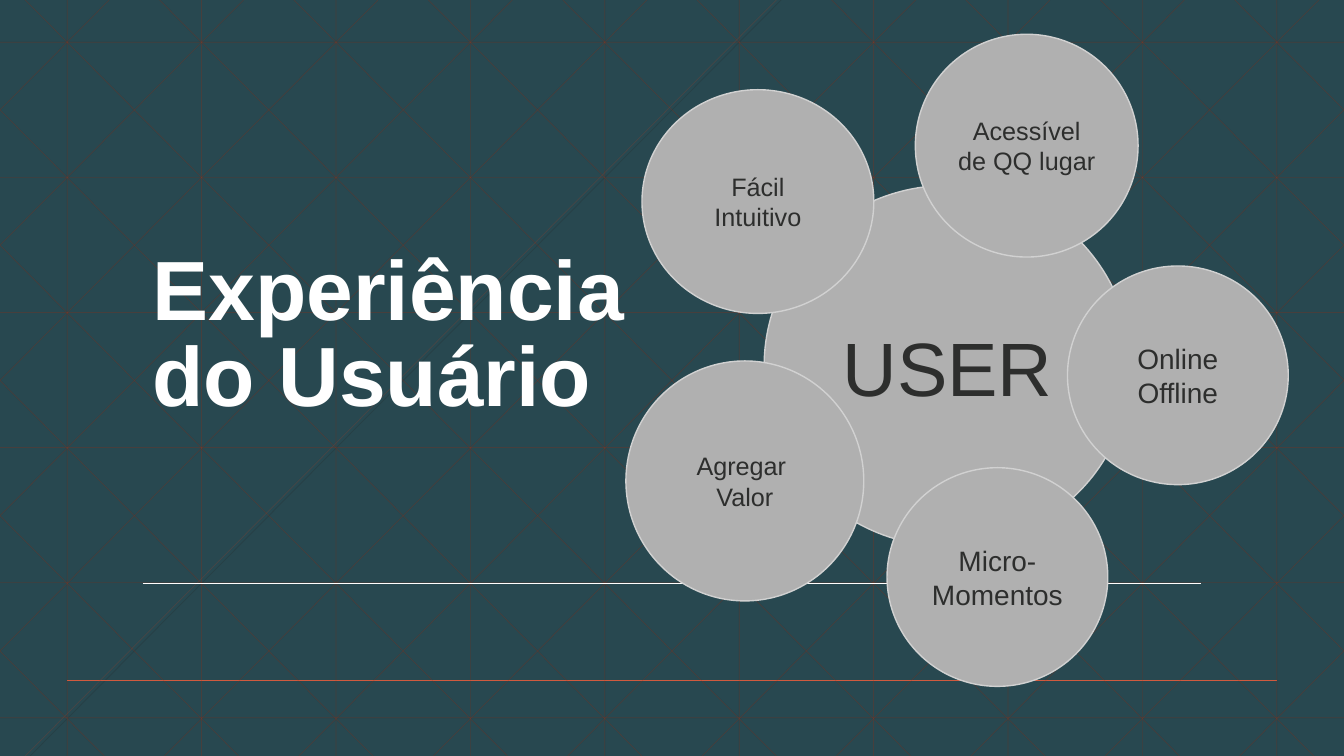
from typing import Iterator, NamedTuple

from lxml.etree import SubElement
from pptx import Presentation
from pptx.dml.color import RGBColor
from pptx.enum.shapes import MSO_CONNECTOR, MSO_SHAPE
from pptx.enum.text import MSO_ANCHOR, PP_ALIGN
from pptx.oxml.ns import qn
from pptx.slide import Slide
from pptx.util import Pt

WIDTH, HEIGHT = 960, 540
STEP = 96
DIAGONAL_RUN = 536.5
BACKGROUND, WHITE, ACCENT = "284850", "FFFFFF", "D15A3E"
LATTICE_DARK, LATTICE_RED = "262726", "A43F27"
BUBBLE_FILL, BUBBLE_LINE, BUBBLE_TEXT = "B0B0B0", "D1D1D1", "2D2E2D"


class Line(NamedTuple):
    x1: float
    y1: float
    x2: float
    y2: float


class Bubble(NamedTuple):
    left: float
    top: float
    width: float
    height: float
    size: int
    lines: list[str]


BUBBLES = [
    Bubble(545.8, 132.5, 262, 257.8, 54, ["USER"]),
    Bubble(762.5, 190, 157.7, 156.2, 20, ["Online", "Offline"]),
    Bubble(458.6, 64.1, 165.6, 159.8, 18, ["Fácil", "Intuitivo"]),
    Bubble(653.8, 24.5, 159.1, 159.1, 18, ["Acessível de QQ lugar"]),
    Bubble(633.6, 334.1, 157.7, 156.2, 20, ["Micro-Momentos"]),
    Bubble(447.1, 257.8, 169.9, 171.4, 18, ["Agregar ", "Valor"]),
]


def rgb(color: str) -> RGBColor:
    return RGBColor.from_string(color)


def apply_format(target: object, values: dict[str, object]) -> None:
    for name, value in values.items():
        setattr(target, name, value)


def add_line(s: Slide, line: Line, color: str, weight: float,
             opacity: int = 100) -> None:
    c = s.shapes.add_connector(MSO_CONNECTOR.STRAIGHT, *(Pt(v) for v in line))
    c.line.color.rgb = rgb(color)
    c.line.width = Pt(weight)
    sp_pr = c.element.spPr
    if opacity < 100:
        clr = sp_pr.find(".//" + qn("a:srgbClr"))
        SubElement(clr, qn("a:alpha"), val=str(opacity * 1000))
    SubElement(sp_pr, qn("a:effectLst"))


def lattice(middle_shift: float) -> Iterator[Line]:
    """Yield the grid and both sets of diagonals, clipped to the slide."""
    for i in range(10):
        x = 48 + STEP * i
        yield Line(x, 0, x, HEIGHT)
    for i in range(6):
        y = 30.24 + 96.48 * i
        yield Line(0, y, WIDTH, y)
    slope = HEIGHT / DIAGONAL_RUN
    for i in range(-5, 10):
        start = 18 + STEP * i
        x1, x2 = max(start, 0), min(start + DIAGONAL_RUN, WIDTH)
        y1, y2 = (x1 - start) * slope, (x2 - start) * slope
        yield Line(x1, y1, x2, y2)
        shift = middle_shift if i == 4 else 0
        yield Line(WIDTH - x1 - shift, y1, WIDTH - x2 - shift, y2)


def add_lattice(s: Slide, color: str, middle_shift: float = 0) -> None:
    for line in lattice(middle_shift):
        add_line(s, line, color, 0.5, 25)


def add_title(s: Slide, text: str) -> None:
    tb = s.shapes.add_textbox(Pt(102), Pt(128), Pt(756), Pt(216))
    tf = tb.text_frame
    apply_format(tf, {"word_wrap": True, "vertical_anchor": MSO_ANCHOR.BOTTOM,
                      "margin_bottom": Pt(41.5)})
    p = tf.paragraphs[0]
    p.text = text
    p.line_spacing = 0.85
    for r in p.runs:
        apply_format(r.font, {"name": "Arial", "size": Pt(60), "bold": True})
        r.font.color.rgb = rgb(WHITE)


def add_bubble(s: Slide, bubble: Bubble) -> None:
    box = (Pt(v) for v in bubble[:4])
    sp = s.shapes.add_shape(MSO_SHAPE.OVAL, *box)
    sp.shadow.inherit = False
    sp.fill.solid()
    sp.fill.fore_color.rgb = rgb(BUBBLE_FILL)
    sp.line.color.rgb = rgb(BUBBLE_LINE)
    sp.line.width = Pt(1)
    tf = sp.text_frame
    apply_format(tf, {"word_wrap": True, "vertical_anchor": MSO_ANCHOR.MIDDLE,
                      "margin_left": Pt(6), "margin_right": Pt(6)})
    tf.text = "\n".join(bubble.lines)
    for p in tf.paragraphs:
        p.alignment = PP_ALIGN.CENTER
        r = p.runs[0]
        apply_format(r.font, {"name": "Arial", "size": Pt(bubble.size)})
        r.font.color.rgb = rgb(BUBBLE_TEXT)


def main() -> None:
    prs = Presentation()
    apply_format(prs, {"slide_width": Pt(WIDTH), "slide_height": Pt(HEIGHT)})
    s = prs.slides.add_slide(prs.slide_layouts[6])
    s.background.fill.solid()
    s.background.fill.fore_color.rgb = rgb(BACKGROUND)

    add_lattice(s, LATTICE_DARK)
    add_line(s, Line(48, 486, 912, 486), ACCENT, 1)
    add_lattice(s, LATTICE_RED, middle_shift=3.5)
    add_line(s, Line(102, 416.9, 858, 416.9), WHITE, 1)
    add_title(s, "Experiência\vdo Usuário")
    for bubble in BUBBLES:
        add_bubble(s, bubble)
    prs.save("out.pptx")


if __name__ == "__main__":
    main()
